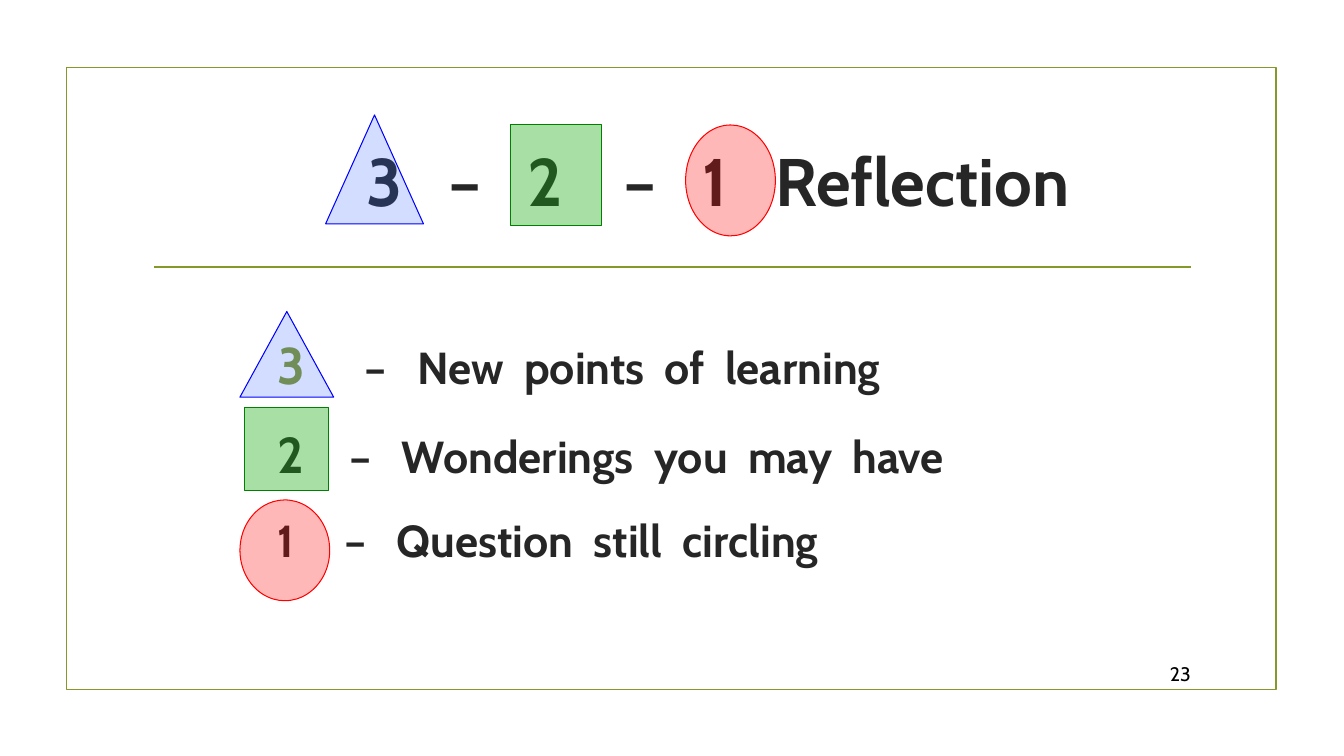
from dataclasses import dataclass
from lxml import etree
from pptx import Presentation
from pptx import util as u
from pptx.dml.color import RGBColor
from pptx.enum import shapes, text
from pptx.oxml.ns import qn


@dataclass(frozen=True)
class Theme:
    font: str = "Cabin"
    ink: str = "262626"
    black: str = "000000"
    olive: str = "83992A"
    title_size: int = 48
    numeral_size: int = 36
    body_size: int = 32
    footer_size: int = 14
    rule_width: float = 1.25
    outline_width: float = 0.75
    space_width: float = 0.225  # width of one space, in ems


THEME = Theme()
# preset, fill, outline, opacity in percent
MARKERS = {
    "three": (shapes.MSO_SHAPE.ISOSCELES_TRIANGLE, "3366FF", "0000FF", 22),
    "two": (shapes.MSO_SHAPE.RECTANGLE, "19AB15", "008000", 38),
    "one": (shapes.MSO_SHAPE.OVAL, "FF0000", "FF0000", 28),
}


def inches(box):
    return [u.Inches(length) for length in box]


def add_text_frame(slide, box, anchor):
    frame = slide.shapes.add_textbox(*inches(box)).text_frame
    frame.word_wrap = True
    frame.vertical_anchor = anchor
    return frame


def add_run(paragraph, words, size, color, bold=True):
    run = paragraph.add_run()
    run.text = words
    run.font.name = THEME.font
    run.font.size = u.Pt(size)
    run.font.bold = bold
    run.font.color.rgb = RGBColor.from_string(color)
    return run


def add_gap(paragraph, spaces, size):
    """Add one space, widened by letter spacing to the given count."""
    run = add_run(paragraph, " ", size, THEME.ink)
    extra = (spaces - 1) * THEME.space_width * size
    run.font._element.set("spc", str(round(extra * 100)))


def add_spaced_words(paragraph, words, gaps, size):
    for index, word in enumerate(words):
        if index:
            add_gap(paragraph, gaps[index - 1], size)
        add_run(paragraph, word, size, THEME.ink)


def add_marker(slide, name, box):
    preset, fill, outline, opacity = MARKERS[name]
    shape = slide.shapes.add_shape(preset, *inches(box))
    shape.shadow.inherit = False
    shape.fill.solid()
    shape.fill.fore_color.rgb = RGBColor.from_string(fill)
    color = shape._element.spPr.find(qn("a:solidFill"))[0]
    etree.SubElement(color, qn("a:alpha")).set("val", str(opacity * 1000))
    shape.line.color.rgb = RGBColor.from_string(outline)
    shape.line.width = u.Pt(THEME.outline_width)


def add_number_bullet(paragraph, start, hang):
    properties = paragraph._p.get_or_add_pPr()
    properties.set("marL", str(u.Inches(hang)))
    properties.set("indent", str(-u.Inches(hang)))
    color = etree.SubElement(properties, qn("a:buClr"))
    etree.SubElement(color, qn("a:srgbClr")).set("val", THEME.olive)
    etree.SubElement(properties, qn("a:buSzPct")).set("val", "115000")
    etree.SubElement(properties, qn("a:buFont")).set("typeface", THEME.font)
    number = etree.SubElement(properties, qn("a:buAutoNum"))
    number.set("type", "arabicPlain")
    number.set("startAt", str(start))


def add_frame(slide, box):
    left, top, width, height = box
    frame = slide.shapes.add_shape(shapes.MSO_SHAPE.RECTANGLE, *inches(box))
    frame.shadow.inherit = False
    frame.fill.background()
    # Rule between the title and the list
    rule_top = top + 1.98
    rule = slide.shapes.add_connector(
        shapes.MSO_CONNECTOR.STRAIGHT,
        *inches((left + 0.87, rule_top, left + width - 0.85, rule_top)))
    etree.SubElement(rule._element.spPr, qn("a:effectLst"))
    for shape in (frame, rule):
        shape.line.color.rgb = RGBColor.from_string(THEME.olive)
        shape.line.width = u.Pt(THEME.rule_width)


def add_title(slide, box):
    left, top, _, _ = box
    frame = add_text_frame(slide, box, text.MSO_ANCHOR.MIDDLE)
    frame.margin_left = u.Inches(2.22)
    # The gaps keep the last numeral inside its oval and the word clear of it
    add_spaced_words(frame.paragraphs[0], ["3", "–", "2", "–", "1", "Reflection"],
                     [3, 3, 4, 3, 3.2], THEME.title_size)
    for name, x, y, width, height in (("three", 1.81, 0.07, 0.97, 1.08),
                                      ("two", 3.64, 0.17, 0.91, 1),
                                      ("one", 5.38, 0.17, 0.89, 1.1)):
        add_marker(slide, name, (left + x, top + y, width, height))


def add_reflection_list(slide, box):
    left, top, _, _ = box
    frame = add_text_frame(slide, box, text.MSO_ANCHOR.TOP)
    size = THEME.body_size
    # numeral, its size, spaces before the dash, prompt
    rows = [("", size, 0, "New points of learning"),
            ("2", THEME.numeral_size, 4, "Wonderings you may have"),
            ("1", size, 5, "Question still circling")]
    for index, (numeral, numeral_size, spaces, prompt) in enumerate(rows):
        paragraph = frame.add_paragraph() if index else frame.paragraphs[0]
        if numeral:
            add_run(paragraph, numeral, numeral_size, THEME.ink)
            add_gap(paragraph, spaces, numeral_size)
            paragraph.space_before = u.Pt(0.2 * numeral_size)
        else:
            add_number_bullet(paragraph, start=3, hang=0.87)
        paragraph.line_spacing = 1.2
        paragraph.space_after = u.Pt(6)
        words = prompt.split()
        add_spaced_words(paragraph, ["–", *words],
                         [3] + [2] * (len(words) - 1), size)
    for name, x, y, width, height in (("three", -0.27, -0.12, 0.93, 0.85),
                                      ("two", -0.22, 0.83, 0.83, 0.83),
                                      ("one", -0.27, 1.75, 0.89, 1)):
        add_marker(slide, name, (left + x, top + y, width, height))


def add_slide_number(slide, box):
    frame = add_text_frame(slide, box, text.MSO_ANCHOR.MIDDLE)
    paragraph = frame.paragraphs[0]
    paragraph.alignment = text.PP_ALIGN.RIGHT
    add_run(paragraph, "23", THEME.footer_size, THEME.black, bold=False)


def main():
    presentation = Presentation()
    presentation.slide_width = u.Inches(13.33)
    presentation.slide_height = u.Inches(7.5)
    slide = presentation.slides.add_slide(presentation.slide_layouts[6])
    add_frame(slide, (0.66, 0.67, 12, 6.17))
    add_title(slide, (1.42, 1.07, 10.5, 1.43))
    add_reflection_list(slide, (2.65, 3.21, 9.26, 3.22))
    add_slide_number(slide, (11.32, 6.53, 0.59, 0.31))
    presentation.save("out.pptx")


if __name__ == "__main__":
    main()
